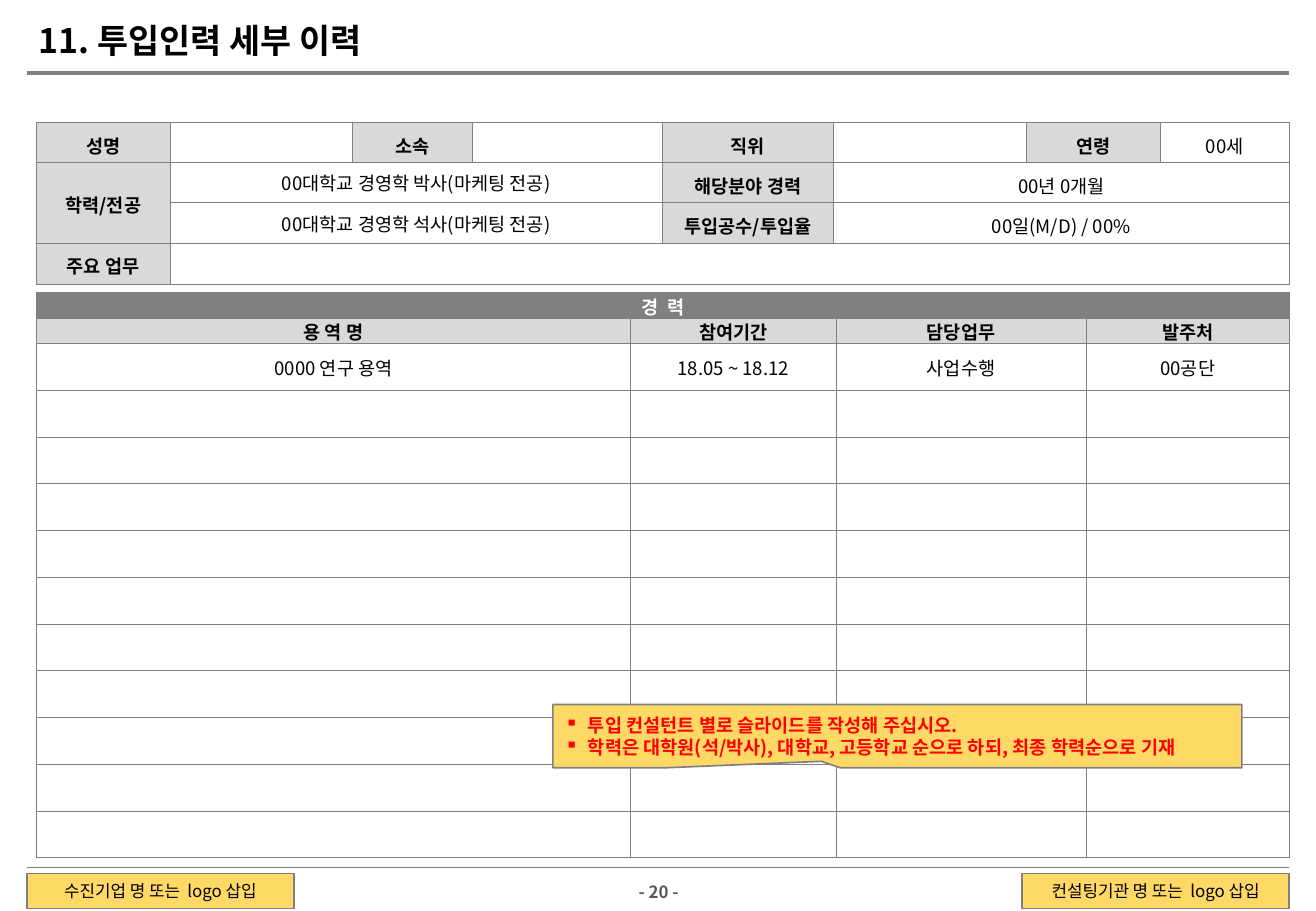
from dataclasses import dataclass
from typing import NamedTuple

from lxml.etree import SubElement
from pptx import Presentation
from pptx.dml.color import RGBColor as Rgb
from pptx.enum.shapes import MSO_CONNECTOR as Link, MSO_SHAPE as Kind
from pptx.enum.text import MSO_ANCHOR as Anchor, PP_ALIGN as Align
from pptx.oxml.ns import qn
from pptx.shapes.autoshape import Shape
from pptx.slide import Slide
from pptx.table import _Cell as Cell
from pptx.util import Inches, Pt


@dataclass(frozen=True)
class Theme:
    face: str = "Noto Sans CJK KR"
    black: str = "000000"
    white: str = "FFFFFF"
    gray: str = "808080"
    pale: str = "D9D9D9"
    dim: str = "595959"
    gold: str = "FFD966"
    red: str = "FF0000"
    head: float = 20
    body: float = 11
    small: float = 10
    hair: float = 0.5


THEME = Theme()


class Box(NamedTuple):
    left: float
    top: float
    width: float
    height: float


@dataclass(frozen=True)
class Look:
    size: float = THEME.body
    color: str = THEME.black
    bold: bool = False
    align: Align = Align.CENTER
    fill: str = THEME.white
    pad: tuple[float, float] = (0.1, 0.05)
    lead: float = 1.0
    before: float = 0
    after: float = 0


@dataclass(frozen=True)
class Entry:
    row: int
    col: int
    text: str
    look: Look
    down: int = 1
    across: int = 1


@dataclass(frozen=True)
class Rule:
    top: float
    weight: float


@dataclass(frozen=True)
class Badge:
    left: float
    text: str


def write(shape: Shape | Cell, lines: list[str], look: Look, bullet: str = "") -> None:
    frame = shape.text_frame
    frame.text = "\n".join(lines)
    for par in frame.paragraphs:
        par.alignment = look.align
        par.line_spacing = look.lead
        par.space_before, par.space_after = Pt(look.before), Pt(look.after)
        if bullet:
            props = par._p.get_or_add_pPr()
            props.set("marL", str(Inches(0.19)))
            props.set("indent", str(Inches(-0.19)))
            SubElement(props, qn("a:buChar"), char=bullet)
        font = par.font
        font.size, font.bold, font.name = Pt(look.size), look.bold, THEME.face
        font.color.rgb = Rgb.from_string(look.color)
        SubElement(font._rPr, qn("a:ea"), typeface=THEME.face)
        if not par.runs:  # keeps empty rows low
            SubElement(par._p, qn("a:endParaRPr"), sz=str(int(look.size * 100)))


def label(slide: Slide, box: Box, text: str, look: Look) -> None:
    shape = slide.shapes.add_textbox(*map(Inches, box))
    frame = shape.text_frame
    frame.word_wrap, frame.vertical_anchor = True, Anchor.MIDDLE
    frame.margin_left = frame.margin_right = Inches(look.pad[0])
    frame.margin_top = frame.margin_bottom = Inches(look.pad[1])
    write(shape, [text], look)


def panel(slide: Slide, kind: Kind, box: Box, lines: list[str], look: Look,
          bullet: str = "") -> Shape:
    shape = slide.shapes.add_shape(kind, *map(Inches, box))
    shape.shadow.inherit = False
    shape.fill.solid()
    shape.fill.fore_color.rgb = Rgb.from_string(look.fill)
    shape.line.color.rgb = Rgb.from_string(THEME.gray)
    shape.line.width = Pt(1)
    shape.text_frame.word_wrap = True
    shape.text_frame.vertical_anchor = Anchor.MIDDLE
    write(shape, lines, look, bullet)
    return shape


def rule(slide: Slide, item: Rule) -> None:
    line = slide.shapes.add_connector(
        Link.STRAIGHT, *map(Inches, (0.22, item.top, 10.61, item.top)))
    line.line.color.rgb = Rgb.from_string(THEME.gray)
    line.line.width = Pt(item.weight)
    SubElement(line._element.spPr, qn("a:effectLst"))


def dress(cell: Cell, text: str, look: Look) -> None:
    props = cell._tc.get_or_add_tcPr()
    for side in ("lnL", "lnR", "lnT", "lnB"):
        edge = SubElement(props, qn(f"a:{side}"), w=str(Pt(THEME.hair)))
        SubElement(SubElement(edge, qn("a:solidFill")), qn("a:srgbClr"), val=THEME.gray)
    cell.fill.solid()
    cell.fill.fore_color.rgb = Rgb.from_string(look.fill)
    cell.vertical_anchor = Anchor.MIDDLE
    cell.margin_left = cell.margin_right = Inches(look.pad[0])
    cell.margin_top = cell.margin_bottom = Inches(look.pad[1])
    write(cell, [text], look)


def grid(slide: Slide, left: float, top: float, cols: list[float], rows: list[float],
         items: list[Entry], blank: Look) -> None:
    box = Box(left, top, sum(cols), sum(rows))
    table = slide.shapes.add_table(len(rows), len(cols), *map(Inches, box)).table
    for col, width in zip(table.columns, cols):
        col.width = Inches(width)
    for row, height in zip(table.rows, rows):
        row.height = Inches(height)
    found = {(item.row, item.col): item for item in items}
    for r in range(len(rows)):
        for c in range(len(cols)):
            item = found.get((r, c), Entry(r, c, "", blank))
            dress(table.cell(r, c), item.text, item.look)
    for item in items:
        if item.down * item.across > 1:
            end = table.cell(item.row + item.down - 1, item.col + item.across - 1)
            table.cell(item.row, item.col).merge(end)


TITLE = Look(size=THEME.head, bold=True, align=Align.LEFT)
PAGE = Look(size=THEME.small, color=THEME.dim, bold=True, pad=(0, 0))
BADGE = Look(size=THEME.small, fill=THEME.gold)
NOTE = Look(color=THEME.red, bold=True, align=Align.LEFT, fill=THEME.gold)
NAME = Look(bold=True, fill=THEME.pale, lead=1.1, before=1.1, after=3.3)
VALUE = Look(lead=1.1, before=1.1, after=3.3)
DEGREE = Look(after=3.3)
BAND = Look(color=THEME.white, bold=True, fill=THEME.gray, pad=(0.08, 0))
HEAD = Look(bold=True, fill=THEME.pale, pad=(0.08, 0))
JOB = Look(pad=(0.02, 0.02))

PERSON = [
    *(Entry(0, 2 * i, text, NAME) for i, text in enumerate(["성명", "소속", "직위", "연령"])),
    Entry(0, 7, "00세", VALUE),
    Entry(1, 0, "학력/전공", NAME, down=2),
    Entry(1, 1, "00대학교 경영학 박사(마케팅 전공)", DEGREE, across=3),
    Entry(1, 4, "해당분야 경력", NAME),
    Entry(1, 5, "00년 0개월", VALUE, across=3),
    Entry(2, 1, "00대학교 경영학 석사(마케팅 전공)", DEGREE, across=3),
    Entry(2, 4, "투입공수/투입율", NAME),
    Entry(2, 5, "00일(M/D) / 00%", VALUE, across=3),
    Entry(3, 0, "주요 업무", NAME),
    Entry(3, 1, "", VALUE, across=7),
]
CAREER = [
    Entry(0, 0, "경  력", BAND, across=4),
    *(Entry(1, i, text, HEAD)
      for i, text in enumerate(["용 역 명", "참여기간", "담당업무", "발주처"])),
    *(Entry(2, i, text, JOB)
      for i, text in enumerate(["0000 연구 용역", "18.05 ~ 18.12", "사업수행", "00공단"])),
]
RULES = [Rule(0.6, 2.25), Rule(7.14, THEME.hair)]
BADGES = [Badge(8.41, "컨설팅기관 명 또는  logo 삽입"), Badge(0.22, "수진기업 명 또는  logo 삽입")]
TIPS = ["투입 컨설턴트 별로 슬라이드를 작성해 주십시오.",
        "학력은 대학원(석/박사), 대학교, 고등학교 순으로 하되, 최종 학력순으로 기재"]


def main() -> None:
    deck = Presentation()
    deck.slide_width, deck.slide_height = Inches(10.83), Inches(7.5)
    slide = deck.slides.add_slide(deck.slide_layouts[6])

    # Page frame
    label(slide, Box(4.96, 7.26, 0.92, 0.17), "- 20 -", PAGE)
    for item in RULES:
        rule(slide, item)
    for badge in BADGES:
        panel(slide, Kind.RECTANGLE, Box(badge.left, 7.19, 2.2, 0.29), [badge.text], BADGE)
    label(slide, Box(0.22, 0.11, 6.85, 0.44), "11. 투입인력 세부 이력", TITLE)

    # Personal data and career tables
    grid(slide, 0.3, 1.01, [1.1, 1.5, 0.99, 1.56, 1.41, 1.59, 1.1, 1.06],
         [0.33] * 3 + [0.34], PERSON, VALUE)
    grid(slide, 0.3, 2.41, [4.89, 1.69, 2.06, 1.67], [0.21] * 2 + [0.385] * 11, CAREER, JOB)

    # Writing tips
    note = panel(slide, Kind.RECTANGULAR_CALLOUT, Box(4.55, 5.8, 5.67, 0.52), TIPS, NOTE, "▪")
    note.adjustments[0], note.adjustments[1] = -0.11, 0.4
    deck.save("out.pptx")


if __name__ == "__main__":
    main()
